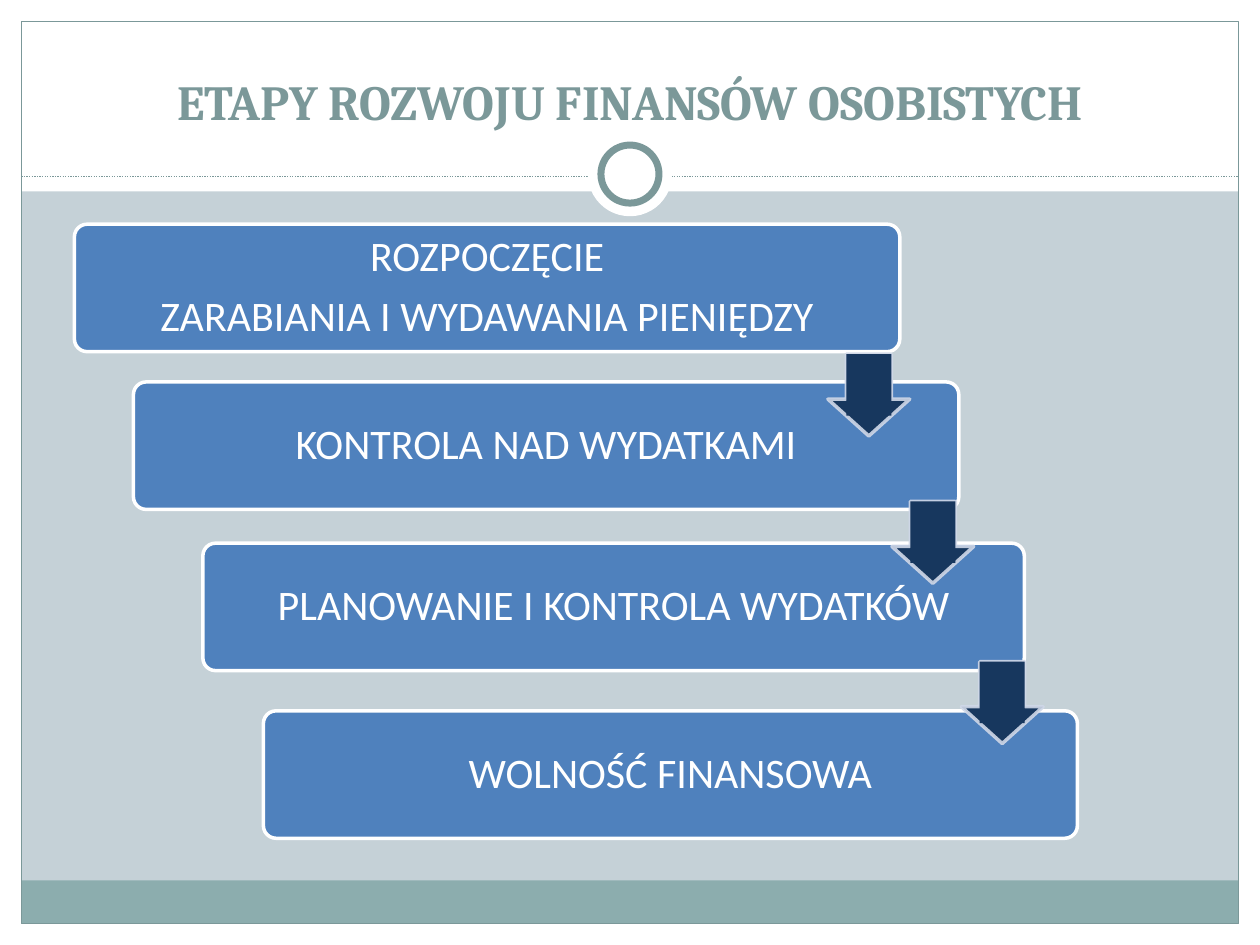
from dataclasses import dataclass

from lxml import etree
from pptx import Presentation
from pptx.dml.color import RGBColor
from pptx.enum.dml import MSO_LINE
from pptx.enum.shapes import MSO_CONNECTOR, MSO_SHAPE
from pptx.enum.text import MSO_ANCHOR, PP_ALIGN
from pptx.oxml.ns import qn
from pptx.util import Cm, Pt

RECTANGLE = MSO_SHAPE.RECTANGLE
ROUNDED = MSO_SHAPE.ROUNDED_RECTANGLE
OVAL = MSO_SHAPE.OVAL
DOWN_ARROW = MSO_SHAPE.DOWN_ARROW
CENTER = PP_ALIGN.CENTER


@dataclass(frozen=True)
class Theme:
    background: str = "C5D1D7"
    white: str = "FFFFFF"
    accent: str = "7B9899"
    footer: str = "8CADAE"
    bar: str = "4F81BD"
    arrow: str = "17375E"
    arrow_line: str = "D0D8E8"
    title_font: str = "Cambria"
    body_font: str = "Calibri"
    title_size: int = 28
    body_size: int = 24


theme = Theme()


def add_box(kind, left, top, width, height, fill=None, line=None, line_width=0.75):
    """Add a preset shape, measured in centimetres, without a shadow."""
    shape = slide.shapes.add_shape(kind, Cm(left), Cm(top), Cm(width), Cm(height))
    shape.shadow.inherit = False
    if fill:
        shape.fill.solid()
        shape.fill.fore_color.rgb = RGBColor.from_string(fill)
    else:
        shape.fill.background()
    if line:
        shape.line.color.rgb = RGBColor.from_string(line)
        shape.line.width = Pt(line_width)
    else:
        shape.line.fill.background()
    return shape


def set_font(paragraph, name, size, color, bold=False):
    paragraph.alignment = CENTER
    paragraph.font.name = name
    paragraph.font.size = Pt(size)
    paragraph.font.bold = bold
    paragraph.font.color.rgb = RGBColor.from_string(color)


WIDTH, HEIGHT, MARGIN = 25.4, 19.05, 0.43
INNER_WIDTH = WIDTH - 2 * MARGIN

presentation = Presentation()
presentation.slide_width, presentation.slide_height = Cm(WIDTH), Cm(HEIGHT)
slide = presentation.slides.add_slide(presentation.slide_layouts[5])
slide.background.fill.solid()
slide.background.fill.fore_color.rgb = RGBColor.from_string(theme.background)

# White margins with the header band, then the footer band and the frame
for left, top, width, height in [
    (0, HEIGHT - MARGIN, WIDTH, MARGIN),
    (0, 0, WIDTH, 3.86),
    (0, 0, MARGIN, HEIGHT),
    (WIDTH - MARGIN, 0, MARGIN, HEIGHT),
]:
    add_box(RECTANGLE, left, top, width, height, theme.white)
add_box(RECTANGLE, MARGIN, 17.75, INNER_WIDTH, 0.87, theme.footer)
add_box(RECTANGLE, MARGIN, MARGIN, INNER_WIDTH, HEIGHT - 2 * MARGIN, line=theme.accent)

# Dotted divider with a ring in the middle
divider = slide.shapes.add_connector(
    MSO_CONNECTOR.STRAIGHT, Cm(MARGIN), Cm(3.56), Cm(WIDTH - MARGIN), Cm(3.56))
divider.line.color.rgb = RGBColor.from_string(theme.accent)
divider.line.width = Pt(0.75)
divider.line.dash_style = MSO_LINE.ROUND_DOT
etree.SubElement(divider.element.spPr, qn("a:effectLst"))
for diameter, line in [(1.7, None), (1.17, theme.accent)]:
    add_box(OVAL, (WIDTH - diameter) / 2, 3.51 - diameter / 2,
            diameter, diameter, theme.white, line, 4)

# The title goes in front of the header band
title = slide.shapes.title
title.element.getparent().append(title.element)
title.left, title.top, title.width, title.height = Cm(0.85), Cm(0.64), Cm(23.7), Cm(2.11)
title.text_frame.text = "ETAPY ROZWOJU FINANSÓW OSOBISTYCH"
title.text_frame.vertical_anchor = MSO_ANCHOR.BOTTOM
set_font(title.text_frame.paragraphs[0], theme.title_font, theme.title_size,
         theme.accent, bold=True)

# Stages: left, top, width, text
stages = [
    (1.5, 4.52, 16.64, "ROZPOCZĘCIE\nZARABIANIA I WYDAWANIA PIENIĘDZY"),
    (2.69, 7.7, 16.64, "KONTROLA NAD WYDATKAMI"),
    (4.09, 10.95, 16.56, "PLANOWANIE I KONTROLA WYDATKÓW"),
    (5.31, 14.33, 16.41, "WOLNOŚĆ FINANSOWA"),
]
for left, top, width, text in stages:
    bar = add_box(ROUNDED, left, top, width, 2.57, theme.bar, theme.white, 2)
    bar.adjustments[0] = 0.1
    frame = bar.text_frame
    frame.word_wrap = True
    frame.vertical_anchor = MSO_ANCHOR.MIDDLE
    frame.margin_left = frame.margin_right = Cm(0.33)
    frame.margin_top = frame.margin_bottom = Cm(0.33)
    frame.text = text
    for paragraph in frame.paragraphs:
        set_font(paragraph, theme.body_font, theme.body_size, theme.white)
        paragraph.line_spacing = 0.9
        paragraph.space_after = Pt(8.4)

# Arrows between stages; a plain shaft covers the outline of each arrow's stem
ARROW_SIZE, SHAFT_RATIO = 1.65, 0.55
shaft_width = ARROW_SIZE * SHAFT_RATIO
for left, top in [(16.69, 7.14), (17.98, 10.11), (19.38, 13.34)]:
    arrow = add_box(DOWN_ARROW, left, top, ARROW_SIZE, ARROW_SIZE,
                    theme.arrow, theme.arrow_line, 2)
    arrow.adjustments[0] = SHAFT_RATIO
    arrow.adjustments[1] = 0.45
    line_color = arrow.element.spPr.find(qn("a:ln")).find(".//" + qn("a:srgbClr"))
    etree.SubElement(line_color, qn("a:alpha")).set("val", "90000")
    add_box(RECTANGLE, left + (ARROW_SIZE - shaft_width) / 2, top,
            shaft_width, 1.24, theme.arrow)

presentation.save("out.pptx")
